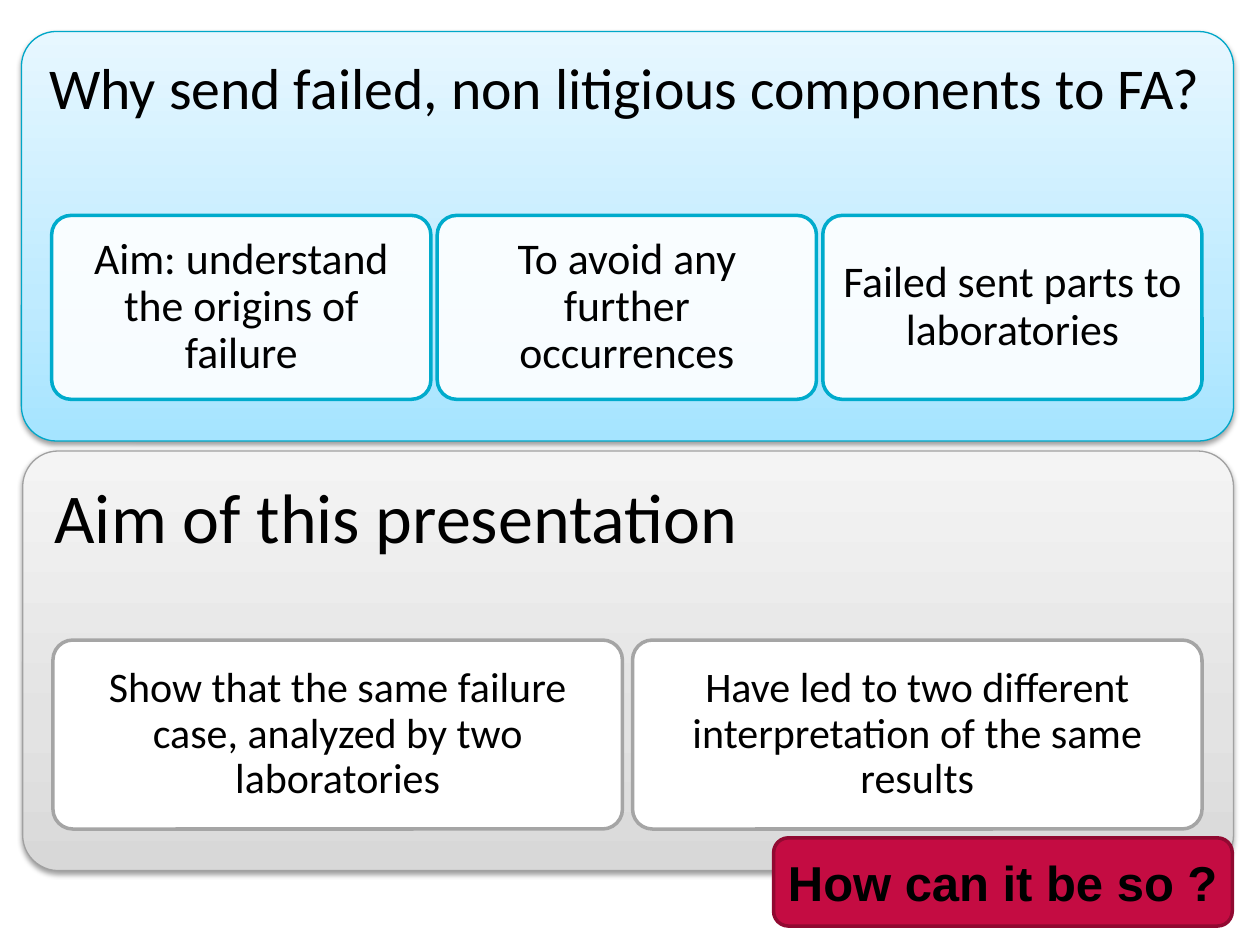
from lxml import etree
from pptx import Presentation
from pptx.dml.color import RGBColor
from pptx.enum.shapes import MSO_SHAPE
from pptx.enum.text import MSO_ANCHOR, MSO_AUTO_SIZE, PP_ALIGN
from pptx.oxml.ns import qn
from pptx.util import Inches, Pt

COLORS = {
    "text": "000000", "card": "FFFFFF",
    "blue edge": "00A7C8", "blue card": "00ABCC",
    "gray edge": "A1A1A1", "gray card": "A5A5A5",
    "red": "C40C42", "red edge": "910931",
}
FADES = {
    "blue": {0: "A5E4FF", 35: "BFEBFF", 100: "E7F7FF"},
    "gray": {0: "D8D8D8", 35: "E3E3E3", 100: "F4F4F4"},
}


def rgb(name):
    return RGBColor.from_string(COLORS[name])


def add_node(parent, tag, **attrs):
    node = etree.SubElement(parent, qn(tag))
    for key, value in attrs.items():
        node.set(key, str(value))
    return node


def add_box(slide, box, round_by, edge, weight):
    shape = slide.shapes.add_shape(
        MSO_SHAPE.ROUNDED_RECTANGLE, *(Inches(v) for v in box))
    shape.adjustments[0] = round_by
    shape.shadow.inherit = False
    shape.line.color.rgb = rgb(edge)
    shape.line.width = Pt(weight)
    return shape


def fill_solid(shape, name, alpha=100):
    shape.fill.solid()
    shape.fill.fore_color.rgb = rgb(name)
    if alpha < 100:
        color = shape.fill._xPr.find(qn("a:solidFill"))[0]
        add_node(color, "a:alpha", val=alpha * 1000)


def fill_fade(shape, stops):
    shape.fill.gradient()
    shape.fill.gradient_angle = 90
    group = shape._element.spPr.find(qn("a:gradFill")).find(qn("a:gsLst"))
    for old in list(group):
        group.remove(old)
    for pos, color in stops.items():
        stop = add_node(group, "a:gs", pos=pos * 1000)
        add_node(stop, "a:srgbClr", val=color)


def add_shadow(shape):
    effects = shape._element.spPr.find(qn("a:effectLst"))
    shadow = add_node(effects, "a:outerShdw", blurRad=Pt(3.1), dist=Pt(1.6),
                      dir=90 * 60000, rotWithShape=0)
    color = add_node(shadow, "a:srgbClr", val=COLORS["text"])
    add_node(color, "a:alpha", val=38000)


def write(shape, text, size, inset, align, anchor, font="Calibri", bold=False):
    frame = shape.text_frame
    frame.word_wrap = True
    frame.vertical_anchor = anchor
    frame.margin_left = frame.margin_right = Inches(inset)
    frame.margin_top = frame.margin_bottom = Inches(inset)
    para = frame.paragraphs[0]
    para.alignment = align
    run = para.add_run()
    run.text = text
    run.font.size = Pt(size)
    run.font.name = font
    run.font.bold = bold
    run.font.color.rgb = rgb("text")
    return para


def add_panel(slide, box, tone, title, size, inset):
    panel = add_box(slide, box, 0.085, f"{tone} edge", 0.75)
    fill_fade(panel, FADES[tone])
    add_shadow(panel)
    para = write(panel, title, size, inset, PP_ALIGN.LEFT, MSO_ANCHOR.TOP)
    para.line_spacing = 0.9


def add_cards(slide, box, tone, texts, size, gap, alpha=100):
    """Share the width of the box equally between the cards."""
    left, top, width, height = box
    each = (width - gap * (len(texts) - 1)) / len(texts)
    for i, text in enumerate(texts):
        place = (left + i * (each + gap), top, each, height)
        card = add_box(slide, place, 0.105, f"{tone} card", 2)
        fill_solid(card, "card", alpha)
        para = write(card, text, size, 0.1, PP_ALIGN.CENTER, MSO_ANCHOR.MIDDLE)
        para.line_spacing = 0.9


def add_badge(slide, box, text):
    badge = add_box(slide, box, 0.167, "red edge", 2)
    fill_solid(badge, "red")
    write(badge, text, 28, 0.08, PP_ALIGN.LEFT, MSO_ANCHOR.MIDDLE,
          "Arial", True)
    badge.text_frame.word_wrap = False
    badge.text_frame.auto_size = MSO_AUTO_SIZE.SHAPE_TO_FIT_TEXT


def main():
    deck = Presentation()
    deck.slide_width, deck.slide_height = Inches(10), Inches(7.5)
    slide = deck.slides.add_slide(deck.slide_layouts[6])

    add_panel(slide, (0.17, 0.25, 9.62, 3.25), "blue",
              "Why send failed, non litigious components to FA?", 33, 0.14)
    add_cards(slide, (0.41, 1.71, 9.13, 1.46), "blue", [
        "Aim: understand the origins of failure",
        "To avoid any further occurrences",
        "Failed sent parts to laboratories",
    ], 25, 0.05, alpha=90)

    add_panel(slide, (0.18, 3.58, 9.61, 3.33), "gray",
              "Aim of this presentation", 40, 0.17)
    add_cards(slide, (0.42, 5.08, 9.12, 1.5), "gray", [
        "Show that the same failure case, analyzed by two laboratories",
        "Have led to two different interpretation of the same results",
    ], 24, 0.08)

    add_badge(slide, (6.14, 6.65, 3.64, 0.7), "How can it be so ?")
    deck.save("out.pptx")


if __name__ == "__main__":
    main()
